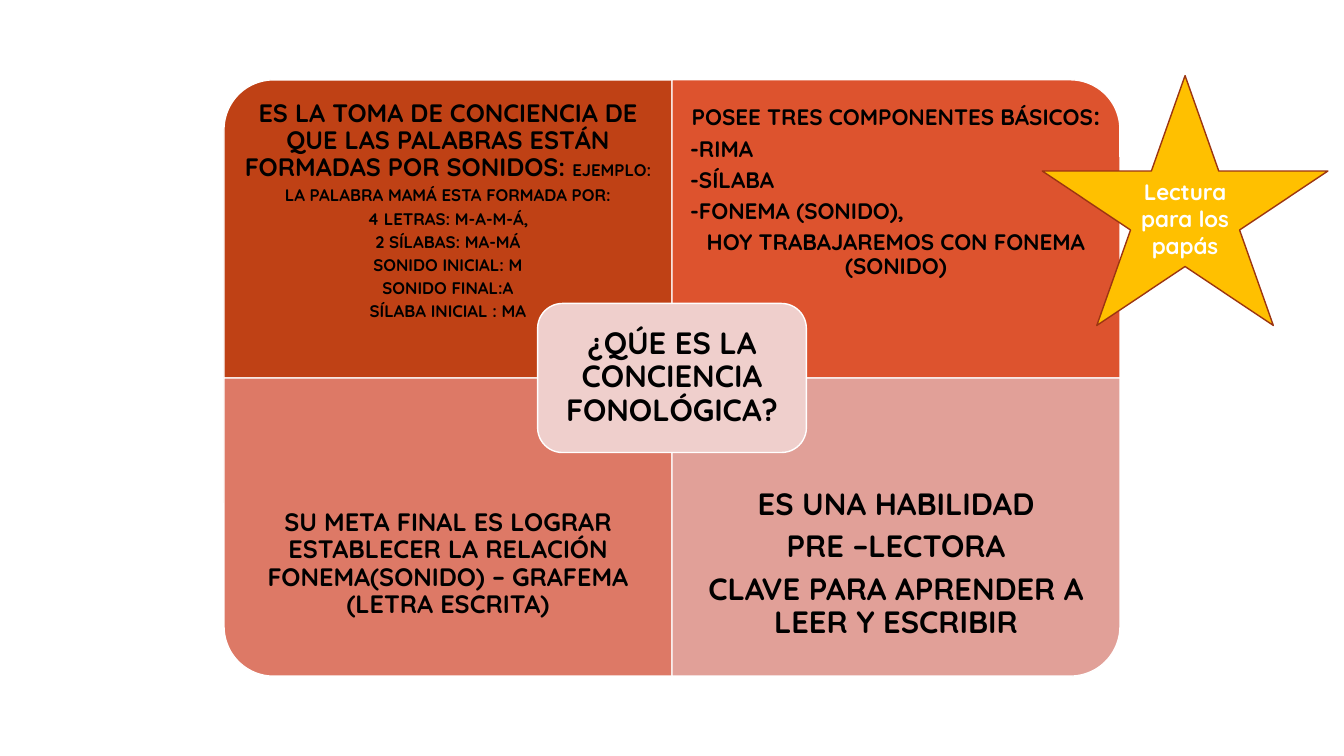
from pptx import Presentation
from pptx.dml.color import RGBColor
from pptx.enum.shapes import MSO_SHAPE
from pptx.enum.text import MSO_ANCHOR, MSO_AUTO_SIZE, PP_ALIGN
from pptx.util import Pt

CENTER, LEFT = PP_ALIGN.CENTER, PP_ALIGN.LEFT
TOP, MIDDLE = MSO_ANCHOR.TOP, MSO_ANCHOR.MIDDLE
NO_FIT = MSO_AUTO_SIZE.NONE
CORNER_PANEL = MSO_SHAPE.ROUND_1_RECTANGLE
ROUNDED = MSO_SHAPE.ROUNDED_RECTANGLE
STAR = MSO_SHAPE.STAR_5_POINT

FONT = "Quicksand"
COLORS = {
    "black": "000000", "white": "FFFFFF", "rust": "BF4115",
    "orange": "DD532E", "salmon": "DD7966", "rose": "E1A098",
    "blush": "EFCFCC", "gold": "FFC000", "brown": "9C3511",
}

# A paragraph is (alignment, [(text, size), ...]).
DEFINITION = [
    (CENTER, [("ES LA TOMA DE CONCIENCIA DE QUE LAS PALABRAS ESTÁN "
               "FORMADAS POR SONIDOS: ", 18), ("EJEMPLO:", 12)]),
] + [(CENTER, [(line, 12)]) for line in (
    "LA PALABRA MAMÁ ESTA FORMADA POR:",
    "4 LETRAS: M-A-M-Á,",
    "2 SÍLABAS: MA-MÁ",
    "SONIDO INICIAL: M",
    "SONIDO FINAL:A",
    "SÍLABA INICIAL : MA",
)]
COMPONENTS = [
    (CENTER, [("POSEE TRES COMPONENTES BÁSICOS", 16), (":", 18)]),
] + [(LEFT, [(line, 16)]) for line in (
    "-RIMA", "-SÍLABA", "-FONEMA (SONIDO),",
)] + [(CENTER, [("HOY TRABAJAREMOS CON FONEMA (SONIDO)", 16)])]
GOAL = [(CENTER, [("SU META FINAL ES LOGRAR ESTABLECER LA RELACIÓN "
                   "FONEMA(SONIDO) – GRAFEMA (LETRA ESCRITA)", 18)])]
SKILL = [(CENTER, [(line, 22)]) for line in (
    "ES UNA HABILIDAD", "PRE –LECTORA",
    "CLAVE PARA APRENDER A LEER Y ESCRIBIR",
)]
QUESTION = [(CENTER, [("¿QÚE ES LA CONCIENCIA FONOLÓGICA?", 22)])]
READING = [(CENTER, [("Lectura para los papás", 16)])]

# (column, row, rotation, colour, paragraphs, inset, anchor)
QUADRANTS = [
    (0, 0, 270, "rust", DEFINITION, 10, TOP),
    (1, 0, 0, "orange", COMPONENTS, 9, MIDDLE),
    (0, 1, 180, "salmon", GOAL, 10, MIDDLE),
    (1, 1, 90, "rose", SKILL, 12, MIDDLE),
]


def add_panel(slide, kind, box, fill, line="white"):
    panel = slide.shapes.add_shape(kind, *(Pt(v) for v in box))
    panel.shadow.inherit = False
    panel.fill.solid()
    panel.fill.fore_color.rgb = RGBColor.from_string(COLORS[fill])
    panel.line.color.rgb = RGBColor.from_string(COLORS[line])
    panel.line.width = Pt(1)
    return panel


def set_margins(frame, inset):
    frame.margin_left = frame.margin_right = Pt(inset)
    frame.margin_top = frame.margin_bottom = Pt(inset)


def write(frame, paragraphs, anchor=MIDDLE, color="black", spacing=0.9):
    frame.word_wrap = True
    frame.auto_size = NO_FIT
    frame.vertical_anchor = anchor
    for index, (alignment, parts) in enumerate(paragraphs):
        paragraph = frame.paragraphs[0] if index == 0 else frame.add_paragraph()
        paragraph.alignment = alignment
        paragraph.line_spacing = spacing
        paragraph.space_before = Pt(0)
        if len(paragraphs) > 1:
            paragraph.space_after = Pt(round(0.3 * parts[-1][1], 1))
        if alignment == LEFT:
            paragraph._p.get_or_add_pPr().set("marL", str(Pt(4)))
        for text, size in parts:
            run = paragraph.add_run()
            run.text = text
            run.font.name = FONT
            run.font.size = Pt(size)
            run.font.bold = True
            run.font.color.rgb = RGBColor.from_string(COLORS[color])


def add_quadrant(slide, box, outer_row, rotation, fill, paragraphs, inset, anchor):
    """Draw a panel with one round corner, its text in the outer three quarters."""
    left, top, width, height = box
    if rotation in (90, 270):
        turn = (width - height) / 2
        outline = (left + turn, top - turn, height, width)
    else:
        outline = box
    add_panel(slide, CORNER_PANEL, outline, fill).rotation = rotation

    text_height = height * 0.75
    text_top = top + outer_row * (height - text_height)
    label = slide.shapes.add_textbox(Pt(left), Pt(text_top), Pt(width), Pt(text_height))
    set_margins(label.text_frame, inset)
    if anchor == TOP:
        label.text_frame.margin_top = Pt(15)
    write(label.text_frame, paragraphs, anchor)


def add_question(slide, box):
    """Draw the central panel and lay the slide title over it."""
    add_panel(slide, ROUNDED, box, "blush")
    title = slide.shapes.title
    slide.shapes._spTree.append(title._element)  # bring to front
    title.left, title.top, title.width, title.height = (Pt(v) for v in box)
    set_margins(title.text_frame, 12)
    write(title.text_frame, QUESTION)


def add_matrix(slide, box):
    left, top, width, height = box
    cell_width, cell_height = width / 2, height / 2
    for column, row, rotation, fill, paragraphs, inset, anchor in QUADRANTS:
        cell = (left + column * cell_width, top + row * cell_height,
                cell_width, cell_height)
        add_quadrant(slide, cell, row, rotation, fill, paragraphs, inset, anchor)
    core_width, core_height = width * 0.3, height / 4
    add_question(slide, (left + (width - core_width) / 2,
                         top + (height - core_height) / 2,
                         core_width, core_height))


def add_star(slide, box):
    star = add_panel(slide, STAR, box, "gold", "brown")
    write(star.text_frame, READING, color="white", spacing=1.0)


def main():
    deck = Presentation()
    deck.slide_width, deck.slide_height = Pt(960), Pt(540)
    slide = deck.slides.add_slide(deck.slide_layouts[5])
    add_matrix(slide, (160, 57, 640, 426))
    add_star(slide, (744.5, 54, 204, 178.5))
    deck.save("out.pptx")


if __name__ == "__main__":
    main()
